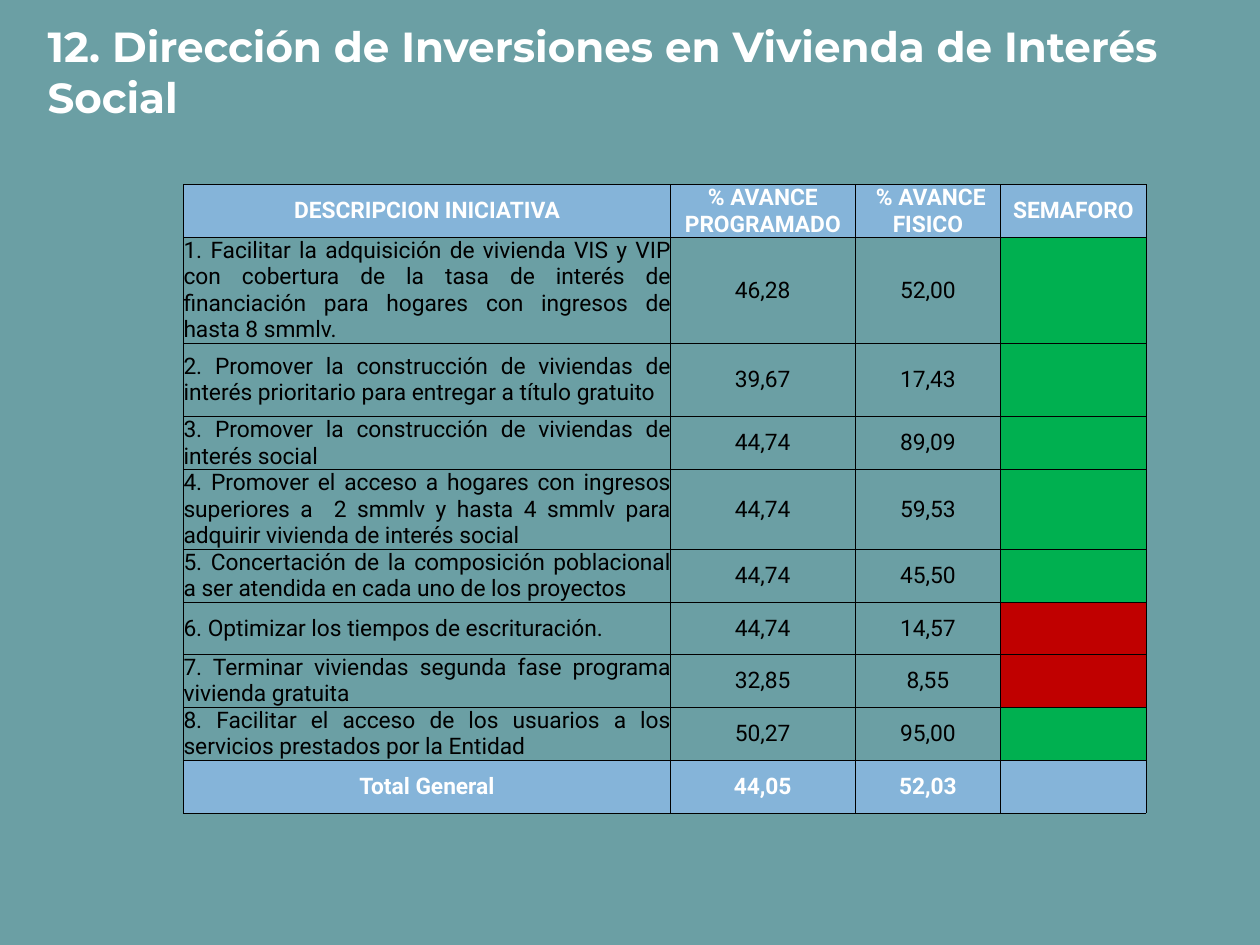
from lxml import etree
from pptx import Presentation
from pptx.dml.color import RGBColor
from pptx.enum.text import MSO_ANCHOR, MSO_AUTO_SIZE, PP_ALIGN
from pptx.oxml.ns import qn
from pptx.util import Cm, Pt

LEFT, CENTER, JUSTIFY = PP_ALIGN.LEFT, PP_ALIGN.CENTER, PP_ALIGN.JUSTIFY
MIDDLE, BOTTOM = MSO_ANCHOR.MIDDLE, MSO_ANCHOR.BOTTOM
NO_AUTOFIT = MSO_AUTO_SIZE.NONE

TEAL = RGBColor(0x6B, 0x9F, 0xA4)
BLUE = RGBColor(0x85, 0xB4, 0xD9)
GREEN = RGBColor(0x00, 0xB0, 0x50)
RED = RGBColor(0xC0, 0x00, 0x00)
WHITE = RGBColor(0xFF, 0xFF, 0xFF)
BLACK = RGBColor(0x00, 0x00, 0x00)

TITLE = "12. Dirección de Inversiones en Vivienda de Interés Social"
HEADINGS = ("DESCRIPCION INICIATIVA", "% AVANCE PROGRAMADO", " % AVANCE FISICO", "SEMAFORO")
# Description, planned progress, physical progress, light, row height in cm
INITIATIVES = [
    ("1. Facilitar la adquisición de vivienda VIS y VIP con cobertura de la tasa de interés "
     "de financiación para hogares con ingresos de hasta 8 smmlv.", "46,28", "52,00", GREEN, 1.98),
    ("2. Promover la construcción de viviendas de interés prioritario para entregar a título "
     "gratuito", "39,67", "17,43", GREEN, 1.48),
    ("3. Promover la construcción de viviendas de interés social",
     "44,74", "89,09", GREEN, 1.06),
    ("4. Promover el acceso a hogares con ingresos superiores a  2 smmlv y hasta 4 smmlv "
     "para adquirir vivienda de interés social", "44,74", "59,53", GREEN, 1.48),
    ("5. Concertación de la composición poblacional a ser atendida en cada uno de los "
     "proyectos", "44,74", "45,50", GREEN, 1.06),
    ("6. Optimizar los tiempos de escrituración.", "44,74", "14,57", RED, 1.06),
    ("7. Terminar viviendas segunda fase programa vivienda gratuita",
     "32,85", "8,55", RED, 1.06),
    ("8. Facilitar el acceso de los usuarios a los servicios prestados por la Entidad",
     "50,27", "95,00", GREEN, 1.06),
]
TOTALS = ("Total General", "44,05", "52,03", "")
COLUMN_WIDTHS = (9.81, 3.73, 2.93, 2.93)
HEADER_HEIGHT, TOTAL_HEIGHT = 1.0, 1.06


class SlideBuilder:
    title_font, body_font = "Montserrat", "Roboto"
    title_size, body_size = Pt(24), Pt(13)
    border_width = Pt(0.5)

    def __init__(self, deck):
        self.page = deck.slides.add_slide(deck.slide_layouts[5])

    def background(self, color):
        fill = self.page.background.fill
        fill.solid()
        fill.fore_color.rgb = color

    def format_paragraph(self, para, align, name, size, color, bold):
        para.alignment = align
        font = para.font
        font.name, font.size, font.bold = name, size, bold
        font.color.rgb = color
        for span in para.runs:
            span.font.name, span.font.size, span.font.bold = name, size, bold
            span.font.color.rgb = color

    def title(self, text, left, top, width, height):
        box = self.page.shapes.title
        box.left, box.top, box.width, box.height = Cm(left), Cm(top), Cm(width), Cm(height)
        frame = box.text_frame
        frame.text = text
        frame.word_wrap = True
        frame.auto_size = NO_AUTOFIT
        frame.vertical_anchor = BOTTOM
        frame.margin_left = frame.margin_right = Cm(0.25)
        frame.margin_top = frame.margin_bottom = Cm(0.25)
        self.format_paragraph(frame.paragraphs[0], LEFT, self.title_font,
                              self.title_size, WHITE, True)

    def table(self, left, top, widths, heights):
        frame = self.page.shapes.add_table(len(heights), len(widths), Cm(left), Cm(top),
                                           Cm(sum(widths)), Cm(sum(heights)))
        table = frame.table
        table.first_row = table.horz_banding = False
        for column, width in zip(table.columns, widths):
            column.width = Cm(width)
        for row, height in zip(table.rows, heights):
            row.height = Cm(height)
        return table

    def borders(self, cell):
        properties = cell._tc.get_or_add_tcPr()
        for side in ("a:lnL", "a:lnR", "a:lnT", "a:lnB"):
            line = etree.SubElement(properties, qn(side), w=str(self.border_width))
            solid = etree.SubElement(line, qn("a:solidFill"))
            etree.SubElement(solid, qn("a:srgbClr"), val=str(BLACK))

    def cell(self, cell, text, align=CENTER, fill=None, color=BLACK, bold=False):
        self.borders(cell)
        if fill is None:
            cell.fill.background()
        else:
            cell.fill.solid()
            cell.fill.fore_color.rgb = fill
        cell.margin_left = cell.margin_right = cell.margin_top = cell.margin_bottom = 0
        cell.vertical_anchor = MIDDLE
        cell.text_frame.text = text
        self.format_paragraph(cell.text_frame.paragraphs[0], align, self.body_font,
                              self.body_size, color, bold)

    def band(self, table, row, texts):
        for column, text in enumerate(texts):
            self.cell(table.cell(row, column), text, fill=BLUE, color=WHITE, bold=True)


def main():
    deck = Presentation()
    deck.slide_width, deck.slide_height = Cm(25.4), Cm(19.05)
    builder = SlideBuilder(deck)
    builder.background(TEAL)
    builder.title(TITLE, 0.71, 0.74, 24.0, 1.96)

    # Progress table
    heights = [HEADER_HEIGHT, *(item[-1] for item in INITIATIVES), TOTAL_HEIGHT]
    table = builder.table(3.7, 3.72, COLUMN_WIDTHS, heights)
    builder.band(table, 0, HEADINGS)
    for row, (description, planned, physical, light, _) in enumerate(INITIATIVES, start=1):
        builder.cell(table.cell(row, 0), description, align=JUSTIFY)
        builder.cell(table.cell(row, 1), planned)
        builder.cell(table.cell(row, 2), physical)
        builder.cell(table.cell(row, 3), "", fill=light)
    builder.band(table, len(heights) - 1, TOTALS)

    deck.save("out.pptx")


if __name__ == "__main__":
    main()
